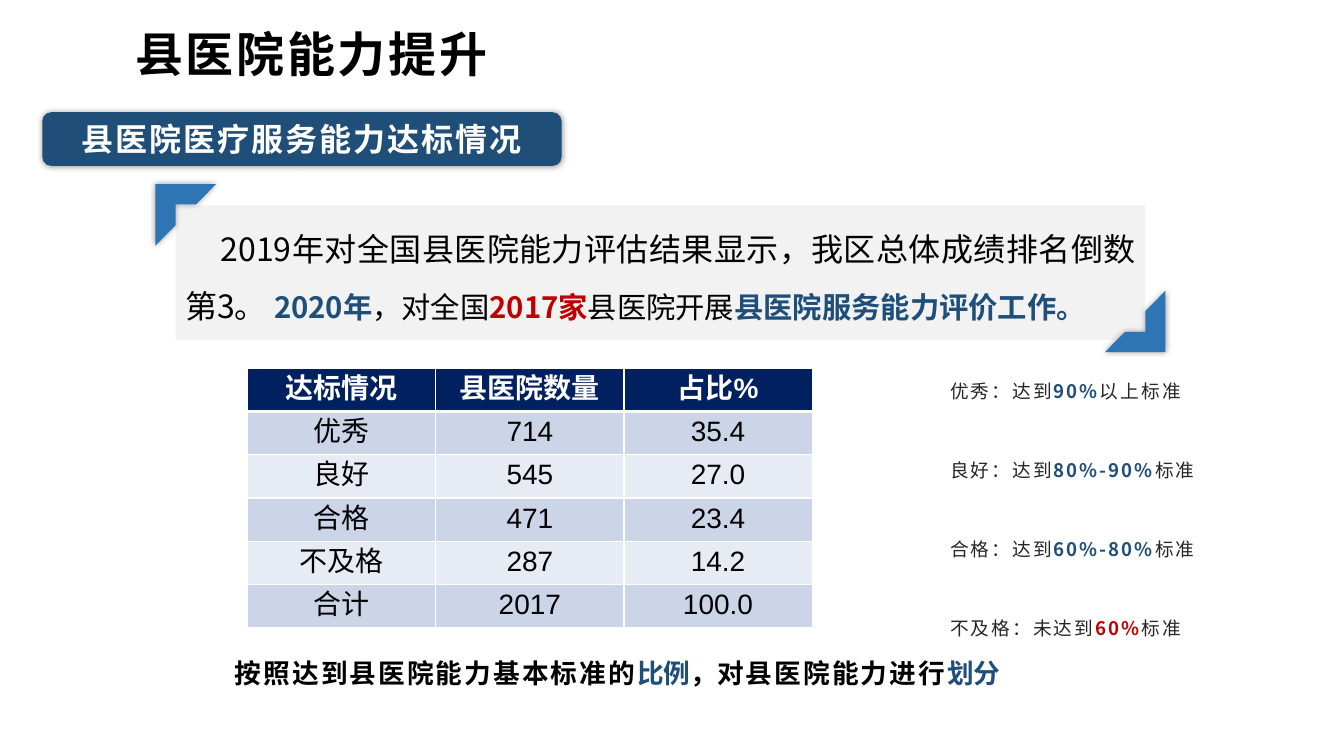
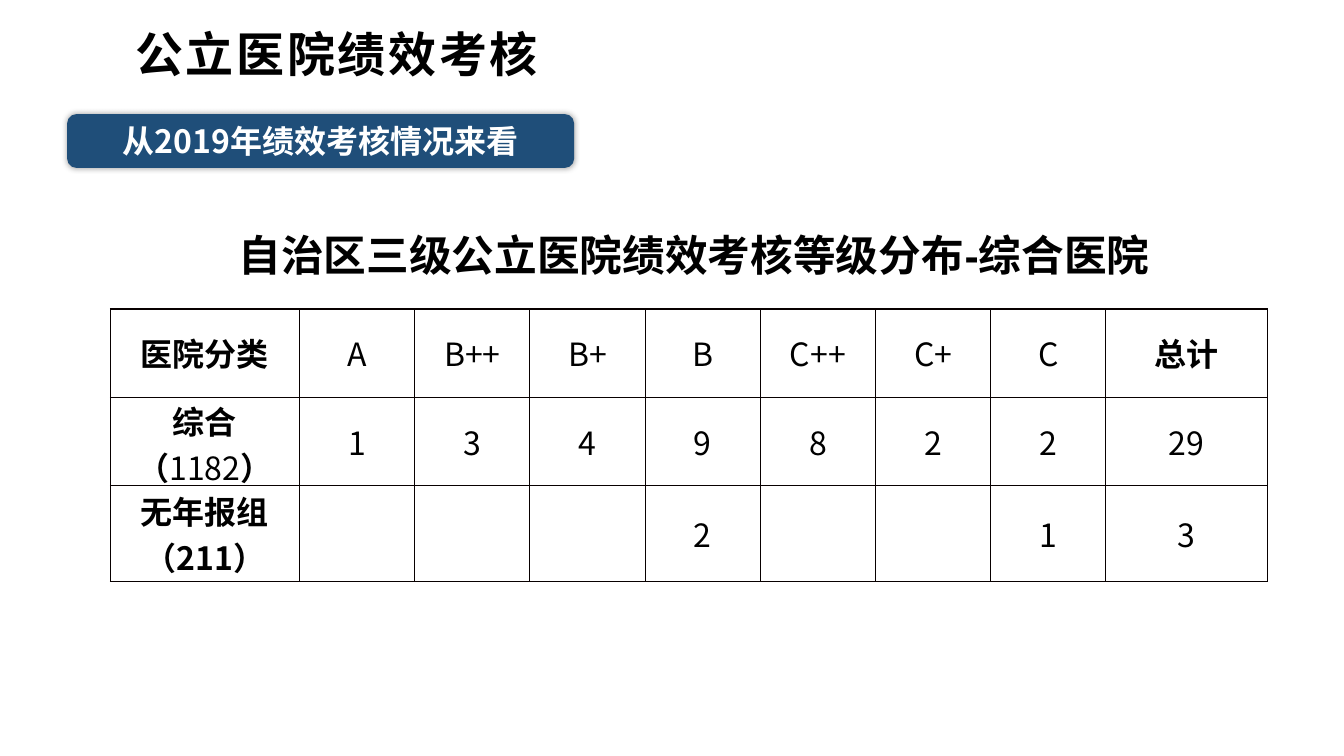
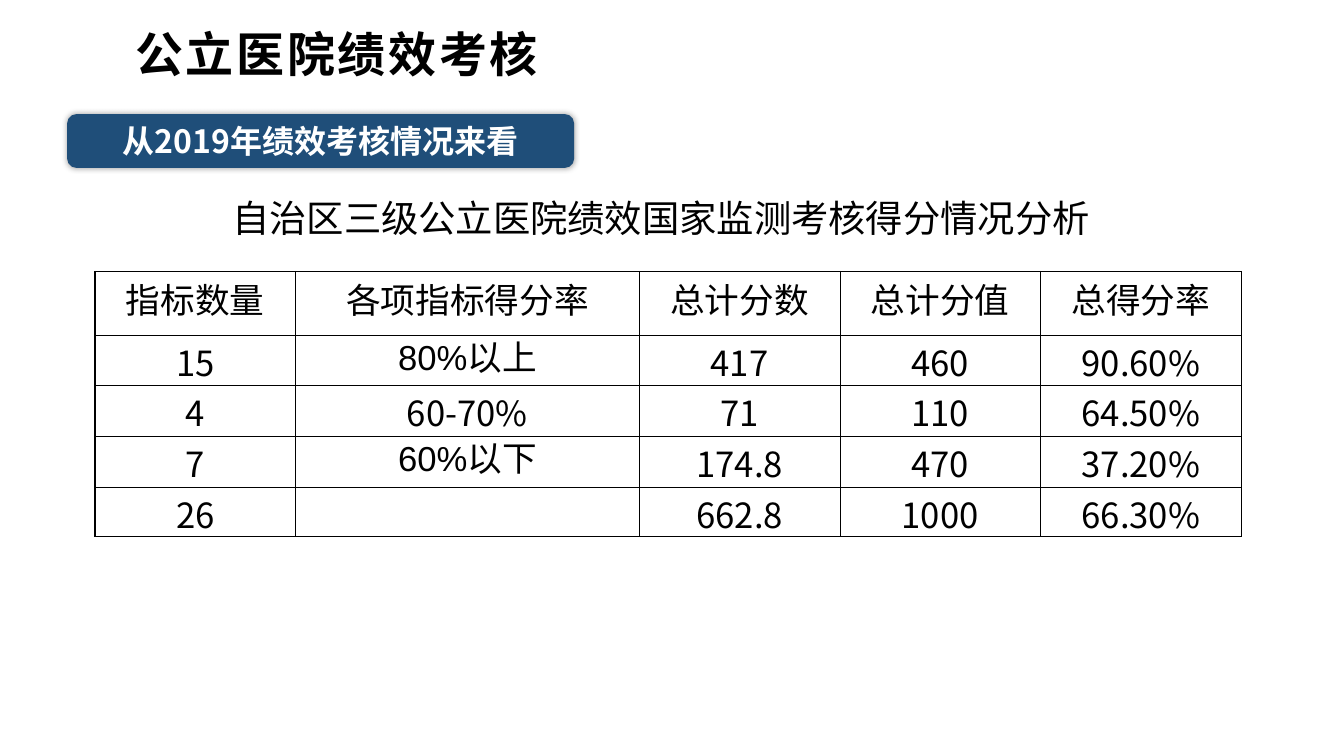
from dataclasses import dataclass

from lxml.etree import SubElement
from pptx import Presentation
from pptx.dml.color import RGBColor
from pptx.enum.shapes import MSO_SHAPE as Shape
from pptx.enum.text import MSO_ANCHOR as Anchor
from pptx.enum.text import MSO_AUTO_SIZE as AutoSize
from pptx.enum.text import PP_ALIGN as Align
from pptx.oxml.ns import qn
from pptx.util import Inches, Pt


@dataclass(frozen=True)
class Theme:
    """Colours, fonts and type sizes shared by all slides."""

    black: str = "000000"
    white: str = "FFFFFF"
    navy: str = "1F4E79"
    blue: str = "2E75B6"
    red: str = "C00000"
    panel: str = "F2F2F2"
    legend: str = "262626"
    header: str = "002060"
    bands: tuple = ("CCD5E8", "E7EBF4")
    grid: str = "080000"
    sans: str = "Noto Sans CJK SC"
    latin: str = "Arial"
    title: float = 36
    caption: float = 32
    subtitle: float = 28
    score: float = 26
    body: float = 24
    accent: float = 22
    rating: float = 21
    note: float = 20
    small: float = 14


THEME = Theme()
WIDTH, HEIGHT = Inches(14), Inches(7.88)
COLUMN, ROW = WIDTH / 140, HEIGHT / 78.8


def place(left, top, width, height):
    """Turn columns and rows of the page grid into slide lengths."""
    return [round(n * unit) for n, unit in zip((left, top, width, height), (COLUMN, ROW) * 2)]


def style(font, props, size=None, face=None, color=None, bold=None, spacing=None):
    """Apply the given character settings to a font and its properties."""
    if size:
        font.size = Pt(size)
    if bold is not None:
        font.bold = bold
    if color:
        font.color.rgb = RGBColor.from_string(color)
    if face:
        font.name = face
        SubElement(props, qn("a:ea")).set("typeface", face)
    if spacing is not None:
        props.set("spc", str(round(spacing * 100)))


def write(frame, pieces, align=Align.LEFT, line=None, after=None, indent=0, **base):
    """Write one paragraph from (text, overrides) pieces over a base style."""
    paragraph = frame.paragraphs[0]
    paragraph.alignment = align
    paragraph.line_spacing = line
    if after:
        paragraph.space_after = Pt(after)
    props = paragraph._p.get_or_add_pPr()
    if indent:
        props.set("indent", str(Inches(indent)))
    style(paragraph.font, props.get_or_add_defRPr(),
          **{"face": THEME.sans, "color": THEME.black, "bold": False, **base})
    for text, overrides in pieces:
        run = paragraph.add_run()
        run.text = text
        if overrides:
            style(run.font, run._r.get_or_add_rPr(), **overrides)


def add_text(slide, box, pieces, anchor=Anchor.TOP, grow=False, flush=False, **look):
    """Add a wrapping text box."""
    frame = slide.shapes.add_textbox(*place(*box)).text_frame
    frame.word_wrap = True
    frame.vertical_anchor = anchor
    if grow:
        frame.auto_size = AutoSize.SHAPE_TO_FIT_TEXT
    if flush:
        frame.margin_left = frame.margin_right = 0
    write(frame, pieces, **look)


def add_block(slide, kind, box, fill, glow=False):
    """Add a filled shape without outline, with a soft glow if asked."""
    block = slide.shapes.add_shape(kind, *place(*box))
    block.fill.solid()
    block.fill.fore_color.rgb = RGBColor.from_string(fill)
    block.line.fill.background()
    block.shadow.inherit = False
    block.text_frame.vertical_anchor = Anchor.TOP
    if glow:
        effects = block._element.spPr.find(qn("a:effectLst"))
        shade = SubElement(effects, qn("a:outerShdw"), blurRad=str(Pt(5)), dist="0", dir="0")
        tint = SubElement(shade, qn("a:srgbClr"), val=THEME.black)
        SubElement(tint, qn("a:alpha"), val="40000")
    return block


def add_heading(slide, title, section, box, spacing=0):
    """Add the slide title and the section pill below it."""
    add_text(slide, (14.1, 2.7, 110.3, 5.8), [(title, {})], anchor=Anchor.MIDDLE,
             flush=True, size=THEME.title, bold=True, spacing=2)
    pill = add_block(slide, Shape.ROUNDED_RECTANGLE, box, THEME.navy, glow=True)
    pill.text_frame.auto_size = AutoSize.SHAPE_TO_FIT_TEXT
    write(pill.text_frame, [(section, {})], align=Align.CENTER, size=THEME.body,
          color=THEME.white, bold=True, spacing=spacing)


def set_borders(cell, color, widths):
    """Draw the left, right, top and bottom borders of a cell."""
    for side, width in zip("LRTB", widths):
        edge = SubElement(cell._tc.get_or_add_tcPr(), qn(f"a:ln{side}"), w=str(Pt(width)))
        SubElement(SubElement(edge, qn("a:solidFill")), qn("a:srgbClr"), val=color)


def add_grid(slide, corner, columns, rows, values, look, border, edges,
             fill=None, margins=None, anchor=Anchor.MIDDLE):
    """Add a table; look, edges and fill are rules taking a cell's row, column or text."""
    box = place(*corner, sum(columns), sum(rows))
    table = slide.shapes.add_table(len(rows), len(columns), *box).table
    table.first_row = table.horz_banding = False
    for column, width in zip(table.columns, columns):
        column.width = round(width * COLUMN)
    for row, height in zip(table.rows, rows):
        row.height = round(height * ROW)
    for r, line in enumerate(values):
        for c, value in enumerate(line):
            cell = table.cell(r, c)
            cell.vertical_anchor = anchor
            if margins:
                (cell.margin_left, cell.margin_top,
                 cell.margin_right, cell.margin_bottom) = map(Inches, margins)
            set_borders(cell, border, edges(r, c))
            if fill:
                cell.fill.solid()
                cell.fill.fore_color.rgb = RGBColor.from_string(fill(r))
            else:
                cell.fill.background()
            pieces = [(value, {})] if isinstance(value, str) else value
            if value:
                write(cell.text_frame, pieces, align=Align.CENTER, **look(r, c, value))


def add_summary(slide):
    """Add the framed paragraph on the assessment."""
    panel = add_block(slide, Shape.RECTANGLE, (18.3, 21.4, 101, 14), THEME.panel)
    navy = {"color": THEME.navy, "bold": True}
    pieces = [
        ("2019年对全国县医院能力评估结果显示，我区总体成绩排名倒数第3。 ", {"size": THEME.body}),
        ("2020年", navy),
        ("，对全国", {}),
        ("2017家", {"color": THEME.red, "bold": True}),
        ("县医院开展", {}),
        ("县医院服务能力评价工作。", navy),
    ]
    write(panel.text_frame, pieces, align=Align.JUSTIFY, line=1.5, indent=0.37, size=THEME.accent)
    for left, top, turn in ((16.2, 19.2, 0), (115.1, 30.3, 180)):
        bracket = add_block(slide, Shape.HALF_FRAME, (left, top, 6.3, 6.4), THEME.blue, glow=True)
        bracket.rotation = turn


def add_legend(slide):
    """Add the four grade definitions beside the table."""
    grades = [
        ("优秀：达到", "90%", "以上标准", THEME.navy),
        ("良好：达到", "80%-90%", "标准", THEME.navy),
        ("合格：达到", "60%-80%", "标准", THEME.navy),
        ("不及格：未达到", "60%", "标准", THEME.red),
    ]
    for i, (lead, share, tail, color) in enumerate(grades):
        add_text(slide, (98, 38.4 + 8.25 * i, 32, 4.2),
                 [(lead, {}), (share, {"color": color, "bold": True}), (tail, {})],
                 anchor=Anchor.MIDDLE, line=1.2, after=10, size=THEME.small,
                 color=THEME.legend, spacing=1.5)


def build_capability(slide):
    """Build the slide on county hospital capability."""
    add_heading(slide, "县医院能力提升", "县医院医疗服务能力达标情况",
                (4.4, 11.7, 54.1, 5.6), spacing=1.5)
    add_summary(slide)
    values = [
        ("达标情况", "县医院数量", "占比%"),
        ("优秀", "714", "35.4"),
        ("良好", "545", "27.0"),
        ("合格", "471", "23.4"),
        ("不及格", "287", "14.2"),
        ("合计", "2017", "100.0"),
    ]
    add_grid(
        slide, (25.8, 38.4), [19.6] * 3, [4.5] * 6, values,
        look=lambda r, c, value: {"size": THEME.rating, "face": THEME.latin, "bold": r == 0,
                                  "color": THEME.black if r else THEME.white},
        border=THEME.white,
        edges=lambda r, c: (1, 1, 3 if r == 1 else 1, 1 if r else 3),
        fill=lambda r: THEME.bands[(r - 1) % 2] if r else THEME.header,
        anchor=Anchor.TOP,
    )
    navy = {"color": THEME.navy, "spacing": 0}
    add_text(slide, (18.3, 67, 92.1, 5.4),
             [("按照达到县医院能力基本标准的", {}), ("比例", navy), ("，", {"spacing": 0}),
              ("对县医院能力进行", {}), ("划分", navy)],
             grow=True, align=Align.CENTER, line=1.3, size=THEME.note, bold=True, spacing=1.5)
    add_legend(slide)


def add_review_heading(slide):
    """Add the heading shared by the performance review slides."""
    add_heading(slide, "公立医院绩效考核", "从2019年绩效考核情况来看", (7, 11.9, 52.8, 5.6))


def build_grades(slide):
    """Build the slide on the spread of review grades."""
    add_review_heading(slide)
    add_text(slide, (18.3, 23.4, 108, 6.4), [("自治区三级公立医院绩效考核等级分布-综合医院", {})],
             grow=True, align=Align.CENTER, size=THEME.caption, face=THEME.latin, bold=True)
    general = [("综合（", {}), ("1182", {"bold": False}), ("）", {})]
    values = [
        ("医院分类", "A", "B++", "B+", "B", "C++", "C+", "C", "总计"),
        (general, "1", "3", "4", "9", "8", "2", "2", "29"),
        ("无年报组（211）", "", "", "", "2", "", "", "1", "3"),
    ]
    add_grid(
        slide, (11.5, 32.2), [19.7, *[12] * 7, 16.8], [9.2, 9.2, 10], values,
        look=lambda r, c, value: {"size": THEME.body, "bold": c == 0 or value == "总计"},
        border=THEME.grid,
        edges=lambda r, c: (1, 1, 1, 1),
        margins=(0.07, 0, 0.07, 0),
    )


def build_scores(slide):
    """Build the slide on the score analysis."""
    add_review_heading(slide)
    add_text(slide, (15.5, 19.9, 106.7, 5.7), [("自治区三级公立医院绩效国家监测考核得分情况分析", {})],
             grow=True, align=Align.CENTER, size=THEME.subtitle, face=THEME.latin)
    values = [
        ("指标数量", "各项指标得分率", "总计分数", "总计分值", "总得分率"),
        ("15", "80%以上", "417", "460", "90.60%"),
        ("4", "60-70%", "71", "110", "64.50%"),
        ("7", "60%以下", "174.8", "470", "37.20%"),
        ("26", "", "662.8", "1000", "66.30%"),
    ]
    add_grid(
        slide, (9.9, 28.3), [20.9, 35.8, *[20.9] * 3], [6.6, 5.3, 5.3, 5.3, 5.1], values,
        look=lambda r, c, value: {"size": THEME.score,
                                  "face": THEME.sans if value.isascii() else THEME.latin},
        border=THEME.black,
        edges=lambda r, c: (1 if c < 2 else 0.5, 1 if c in (0, 4) else 0.5,
                            0.5 if r else 1, 1 if r == 4 else 0.5),
        margins=(0.01, 0.01, 0.01, 0.05),
    )


def main():
    """Build the three slides and save the deck."""
    deck = Presentation()
    deck.slide_width, deck.slide_height = WIDTH, HEIGHT
    for build in (build_capability, build_grades, build_scores):
        build(deck.slides.add_slide(deck.slide_layouts[6]))
    deck.save("out.pptx")


if __name__ == "__main__":
    main()
